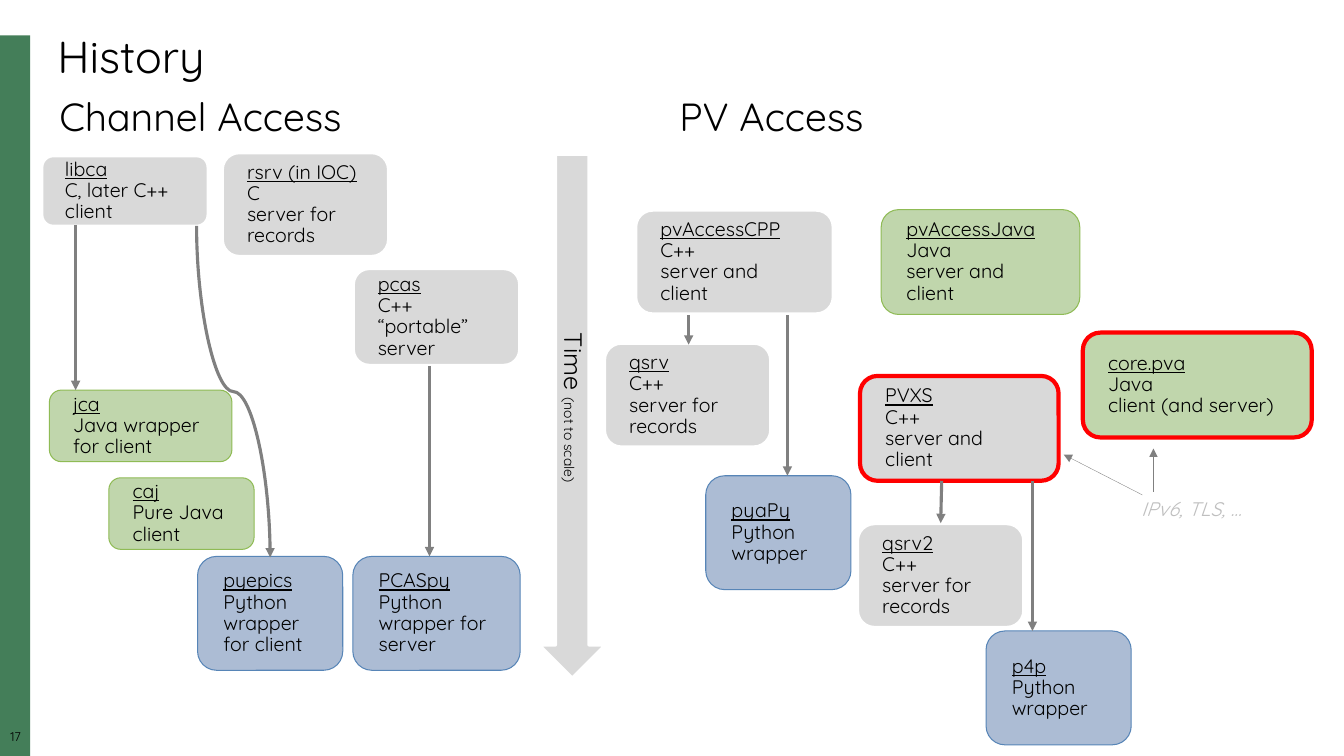
"""Build the History slide: Channel Access and PV Access libraries over time."""
from lxml import etree
from pptx import Presentation
from pptx.dml.color import RGBColor
from pptx.enum.shapes import MSO_CONNECTOR, MSO_SHAPE
from pptx.enum.text import MSO_ANCHOR, PP_ALIGN
from pptx.oxml.ns import qn
from pptx.util import Pt

PX = 9144
STRAIGHT, CURVE = MSO_CONNECTOR.STRAIGHT, MSO_CONNECTOR.CURVE
RECT, ROUNDED, ARROW = MSO_SHAPE.RECTANGLE, MSO_SHAPE.ROUNDED_RECTANGLE, MSO_SHAPE.RIGHT_ARROW
MIDDLE, TOP = MSO_ANCHOR.MIDDLE, MSO_ANCHOR.TOP
LEFT, CENTER = PP_ALIGN.LEFT, PP_ALIGN.CENTER

C_STYLE = ("D9D9D9", "FFFFFF", 3)
JAVA_STYLE = ("C0D6AC", "8FBB55", 0.75)
PYTHON_STYLE = ("ACBCD4", "5785B7", 0.75)
C_NEW = ("D9D9D9", "FF0000", 3)
JAVA_NEW = ("C0D6AC", "FF0000", 3)


def color(hex_string):
    return RGBColor.from_string(hex_string)


def write(frame, paragraphs, inset, anchor=TOP, align=LEFT, wrap=True):
    frame.word_wrap = wrap
    frame.vertical_anchor = anchor
    frame.margin_left = frame.margin_right = inset[0] * PX
    frame.margin_top = frame.margin_bottom = inset[1] * PX
    for index, runs in enumerate(paragraphs):
        paragraph = frame.add_paragraph() if index else frame.paragraphs[0]
        paragraph.alignment = align
        paragraph.line_spacing = 0.9
        for text, size, ink, underline, italic in runs:
            for number, line in enumerate(text.split("\n")):
                if number:
                    paragraph.add_line_break()
                run = paragraph.add_run()
                run.text = line
                run.font.name = "Quicksand"
                run.font.size = Pt(size)
                run.font.color.rgb = color(ink)
                run.font.underline = underline
                run.font.italic = italic


prs = Presentation()
prs.slide_width, prs.slide_height = 1333 * PX, 750 * PX
slide = prs.slides.add_slide(prs.slide_layouts[6])
shapes = slide.shapes

sidebar = shapes.add_shape(RECT, 0, 35 * PX, 30 * PX, 715 * PX)
sidebar.shadow.inherit = False
sidebar.fill.solid()
sidebar.fill.fore_color.rgb = color("447E59")
sidebar.line.fill.background()

labels = [
    ("17", 9, 0, 725, 31, 17, (0, 0), CENTER),
    ("History", 32, 47, 30, 1250, 59, (10, 5), LEFT),
    ("Channel Access", 28, 49, 92, 600, 59, (10, 5), LEFT),
    ("PV Access", 28, 664, 92, 600, 59, (10, 5), LEFT),
]
for text, size, x, y, w, h, inset, align in labels:
    label = shapes.add_textbox(x * PX, y * PX, w * PX, h * PX)
    write(label.text_frame, [[(text, size, "000000", False, False)]], inset, align=align)

libraries = [
    ("libca", "C, later C++ client", 41, 154, 166, 71, C_STYLE),
    ("pcas", "C++\n“portable” server", 350, 266, 166, 97, C_STYLE),
    ("rsrv (in IOC)", "C\nserver for records", 220, 151, 166, 104, C_STYLE),
    ("jca", "Java wrapper for client", 49, 387, 181, 71, JAVA_STYLE),
    ("caj", "Pure Java client", 108, 474, 144, 71, JAVA_STYLE),
    ("pyepics", "Python wrapper for client", 196, 552, 144, 113, PYTHON_STYLE),
    ("PCASpy", "Python wrapper for server", 350, 552, 166, 113, PYTHON_STYLE),
    ("qsrv", "C++\nserver for records", 599, 340, 166, 104, C_STYLE),
    ("pvAccessCPP", "C++\nserver and client", 630, 208, 197, 104, C_STYLE),
    ("pvAccessJava", "Java\nserver and client", 874, 208, 197, 104, JAVA_STYLE),
    ("qsrv2", "C++\nserver for records", 850, 519, 166, 104, C_STYLE),
    ("PVXS", "C++\nserver and client", 853, 373, 197, 104, C_NEW),
    ("core.pva", "Java\nclient (and server)", 1074, 330, 227, 104, JAVA_NEW),
    ("pyaPy", "Python wrapper", 700, 472, 144, 113, PYTHON_STYLE),
    ("p4p", "Python wrapper", 978, 626, 144, 113, PYTHON_STYLE),
]
blocks = [
    (ROUNDED, 0, LEFT, x, y, w, h, style,
     [[(name, 14, "000000", True, False)], [(role, 14, "000000", False, False)]])
    for name, role, x, y, w, h, style in libraries
]
blocks.append((ARROW, 90, CENTER, 307, 379, 521, 68, C_STYLE,
               [[("Time ", 18, "000000", False, False),
                 ("(not to scale)", 10, "000000", False, False)]]))
for preset, rotation, align, x, y, w, h, (fill, outline, weight), paragraphs in blocks:
    block = shapes.add_shape(preset, x * PX, y * PX, w * PX, h * PX)
    block.rotation = rotation
    block.shadow.inherit = False
    block.fill.solid()
    block.fill.fore_color.rgb = color(fill)
    block.line.color.rgb = color(outline)
    block.line.width = Pt(weight)
    write(block.text_frame, paragraphs, (20, 20), MIDDLE, align)

features = shapes.add_textbox(1122 * PX, 491 * PX, 127 * PX, 31 * PX)
write(features.text_frame, [[("IPv6, TLS, …", 14, "BFBFBF", False, True)]], (10, 5), wrap=False)

links = [
    (STRAIGHT, 75, 223, 75, 387, 2.25, 0),
    (CURVE, 396, 352, 67, 425, 2.25, 270),
    (STRAIGHT, 426, 363, 426, 552, 2.25, 0),
    (STRAIGHT, 683, 313, 683, 342, 2.25, 0),
    (STRAIGHT, 781, 313, 781, 472, 2.25, 0),
    (STRAIGHT, 934, 477, 933, 519, 2.25, 0),
    (STRAIGHT, 1024, 477, 1024, 626, 2.25, 0),
    (STRAIGHT, 1133, 491, 1055, 451, 0.25, 0),
    (STRAIGHT, 1144, 488, 1144, 445, 0.25, 0),
]
for route, x1, y1, x2, y2, weight, rotation in links:
    link = shapes.add_connector(route, x1 * PX, y1 * PX, x2 * PX, y2 * PX)
    link.line.color.rgb = color("808080")
    link.line.width = Pt(weight)
    properties = link._element.spPr
    if rotation:
        properties.find(qn("a:xfrm")).set("rot", str(rotation * 60000))
    etree.SubElement(properties.find(qn("a:ln")), qn("a:tailEnd"), type="triangle")
    etree.SubElement(properties, qn("a:effectLst"))

prs.save("out.pptx")
